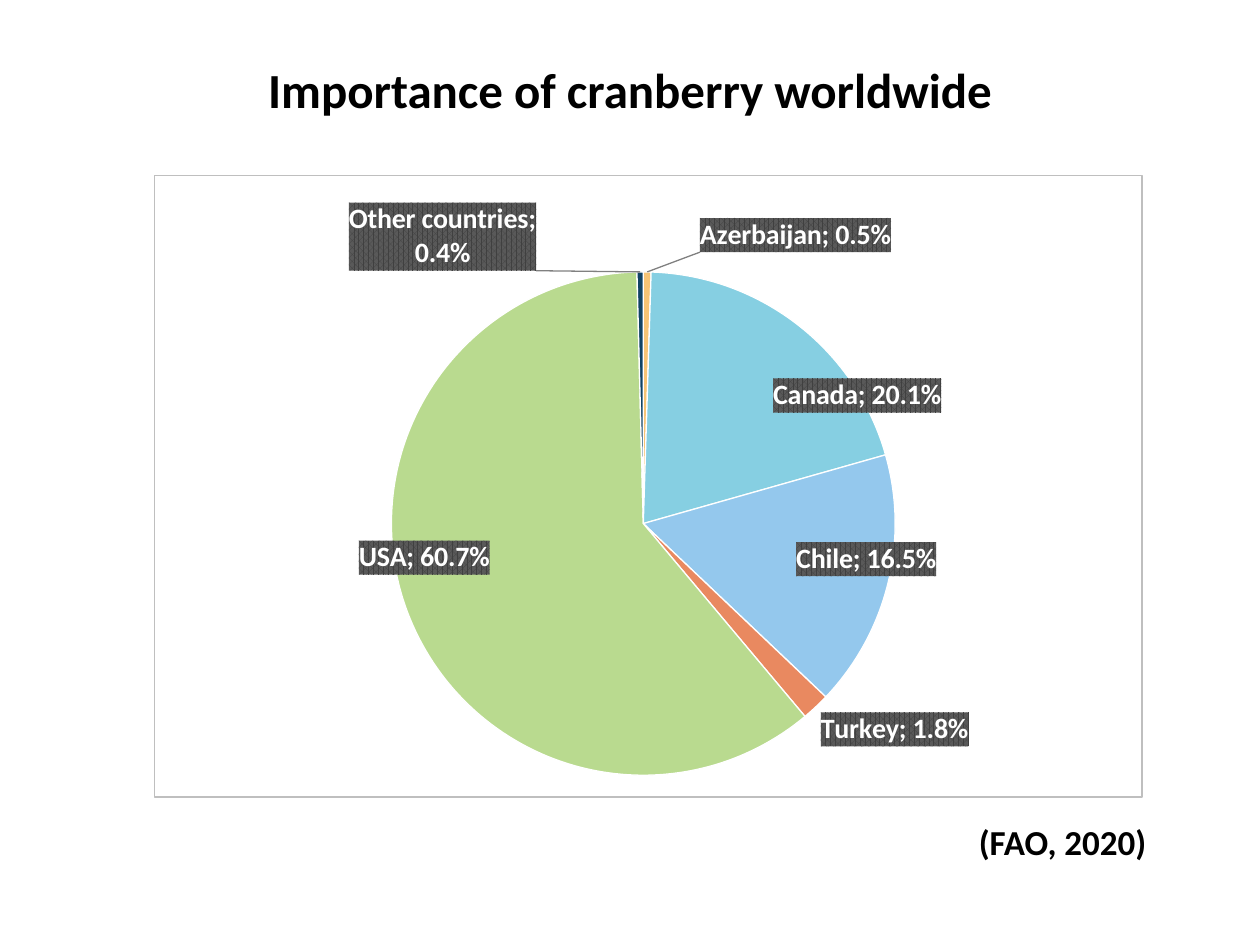
from copy import deepcopy

from lxml import etree
from pptx import Presentation
from pptx.chart.data import CategoryChartData
from pptx.dml.color import RGBColor
from pptx.enum.chart import XL_CHART_TYPE, XL_LABEL_POSITION
from pptx.enum.shapes import MSO_SHAPE
from pptx.enum.text import MSO_ANCHOR, MSO_AUTO_SIZE, PP_ALIGN
from pptx.oxml import parse_xml
from pptx.oxml.ns import nsdecls, qn
from pptx.util import Inches, Pt

PIE = XL_CHART_TYPE.PIE
OUTSIDE = XL_LABEL_POSITION.OUTSIDE_END
RECTANGLE = MSO_SHAPE.RECTANGLE
TOP = MSO_ANCHOR.TOP
FIT_TEXT = MSO_AUTO_SIZE.SHAPE_TO_FIT_TEXT
CENTER, LEFT = PP_ALIGN.CENTER, PP_ALIGN.LEFT

BLACK = RGBColor(0x00, 0x00, 0x00)
WHITE = RGBColor(0xFF, 0xFF, 0xFF)
FRAME_GRAY = RGBColor(0xBF, 0xBF, 0xBF)
LEADER_GRAY = RGBColor(0x80, 0x80, 0x80)
LABEL_DARK = RGBColor(0x40, 0x40, 0x40)
LABEL_LIGHT = RGBColor(0x59, 0x59, 0x59)
FONT = "Calibri"

TITLE = "Importance of cranberry worldwide"
SOURCE = "(FAO, 2020)"
SHARES = [
    ("Azerbaijan", 0.005, RGBColor(0xF7, 0xC4, 0x75), (0.15, -0.02)),
    ("Canada", 0.201, RGBColor(0x86, 0xCF, 0xE2), (-0.03, 0.15)),
    ("Chile", 0.165, RGBColor(0x94, 0xC8, 0xED), (-0.1, -0.07)),
    ("Turkey", 0.018, RGBColor(0xE9, 0x89, 0x60), None),
    ("USA", 0.607, RGBColor(0xB9, 0xDA, 0x8F), (0.09, -0.12)),
    ("Other countries", 0.004, RGBColor(0x11, 0x43, 0x65), (-0.2, 0.01)),
]
PIE_AREA = {"x": 0.24, "y": 0.15, "w": 0.51, "h": 0.82}


def style(font, size, color=BLACK, bold=True):
    font.name, font.size, font.bold = FONT, Pt(size), bold
    font.color.rgb = color


def write(box, text, size, alignment):
    box.text_frame.text = text
    para = box.text_frame.paragraphs[0]
    para.alignment = alignment
    style(para.runs[0].font, size)


def manual_layout(values, inner=False):
    target = '<c:layoutTarget val="inner"/>' if inner else ""
    modes = '<c:xMode val="edge"/><c:yMode val="edge"/>' if inner else ""
    sizes = "".join(f'<c:{key} val="{value}"/>' for key, value in values.items())
    return parse_xml(f'<c:layout {nsdecls("c")}><c:manualLayout>{target}{modes}{sizes}'
                     '</c:manualLayout></c:layout>')


def outline(color):
    return (f'<c:spPr {nsdecls("c", "a")}><a:ln w="9525"><a:solidFill>'
            f'<a:srgbClr val="{color}"/></a:solidFill></a:ln></c:spPr>')


def add_labels(series):
    labels = series.data_labels
    labels.show_value = labels.show_category_name = True
    labels.number_format = "0.0%"
    labels.number_format_is_linked = False
    labels.position = OUTSIDE
    style(labels.font, 16, WHITE)
    group = series._element.find(qn("c:dLbls"))
    group.find(qn("c:txPr")).addprevious(parse_xml(
        f'<c:spPr {nsdecls("c", "a")}><a:pattFill prst="pct75">'
        f'<a:fgClr><a:srgbClr val="{LABEL_DARK}"/></a:fgClr>'
        f'<a:bgClr><a:srgbClr val="{LABEL_LIGHT}"/></a:bgClr></a:pattFill></c:spPr>'))
    separator = etree.Element(qn("c:separator"))
    separator.text = "; "
    group.find(qn("c:showBubbleSize")).addnext(separator)
    labels_style = [part for part in group if part.tag != qn("c:showLeaderLines")]
    moved = []
    for index, (_, _, _, offset) in enumerate(SHARES):
        if offset:
            label = parse_xml(f'<c:dLbl {nsdecls("c")}><c:idx val="{index}"/></c:dLbl>')
            label.append(manual_layout(dict(zip("xy", offset))))
            label.extend(deepcopy(part) for part in labels_style)
            moved.append(label)
    for position, label in enumerate(moved):
        group.insert(position, label)
    leader = group.find(qn("c:showLeaderLines"))
    if leader is None:
        leader = etree.SubElement(group, qn("c:showLeaderLines"))
    leader.set("val", "1")
    lines = etree.Element(qn("c:leaderLines"))
    lines.append(parse_xml(outline(LEADER_GRAY)))
    leader.addnext(lines)


def add_pie(page):
    data = CategoryChartData(number_format="0.0%")
    data.categories = [name for name, *_ in SHARES]
    data.add_series("Series 1", [share for _, share, *_ in SHARES])
    chart = page.shapes.add_chart(PIE, Inches(1.22), Inches(1.39),
                                  Inches(7.85), Inches(4.94), data).chart
    chart.has_legend = chart.has_title = False
    style(chart.font, 10, bold=False)
    plot = chart.plots[0]
    plot.vary_by_categories = True
    series = plot.series[0]
    for index, (_, _, color, _) in enumerate(SHARES):
        wedge = series.points[index].format
        wedge.fill.solid()
        wedge.fill.fore_color.rgb = color
        wedge.line.color.rgb = WHITE
        wedge.line.width = Pt(0.75)
    add_labels(series)
    space = chart._chartSpace
    area = space.find(".//" + qn("c:plotArea"))
    old_layout = area.find(qn("c:layout"))
    if old_layout is not None:
        area.remove(old_layout)
    area.insert(0, manual_layout(PIE_AREA, inner=True))
    space.find(qn("c:txPr")).addprevious(parse_xml(outline(FRAME_GRAY)))


def main():
    deck = Presentation()
    deck.slide_width, deck.slide_height = Inches(10), Inches(7.5)
    page = deck.slides.add_slide(deck.slide_layouts[6])
    add_pie(page)
    title = page.shapes.add_shape(RECTANGLE, 0, Inches(0.42), deck.slide_width, Inches(0.83))
    title.shadow.inherit = False
    title.fill.background()
    title.line.color.rgb = WHITE
    title.line.width = Pt(0.75)
    title.text_frame.vertical_anchor = TOP
    write(title, TITLE, 28, CENTER)
    source = page.shapes.add_textbox(Inches(7.67), Inches(6.46), Inches(1.54), Inches(0.44))
    source.text_frame.word_wrap = False
    source.text_frame.auto_size = FIT_TEXT
    write(source, SOURCE, 20, LEFT)
    deck.save("out.pptx")


if __name__ == "__main__":
    main()
